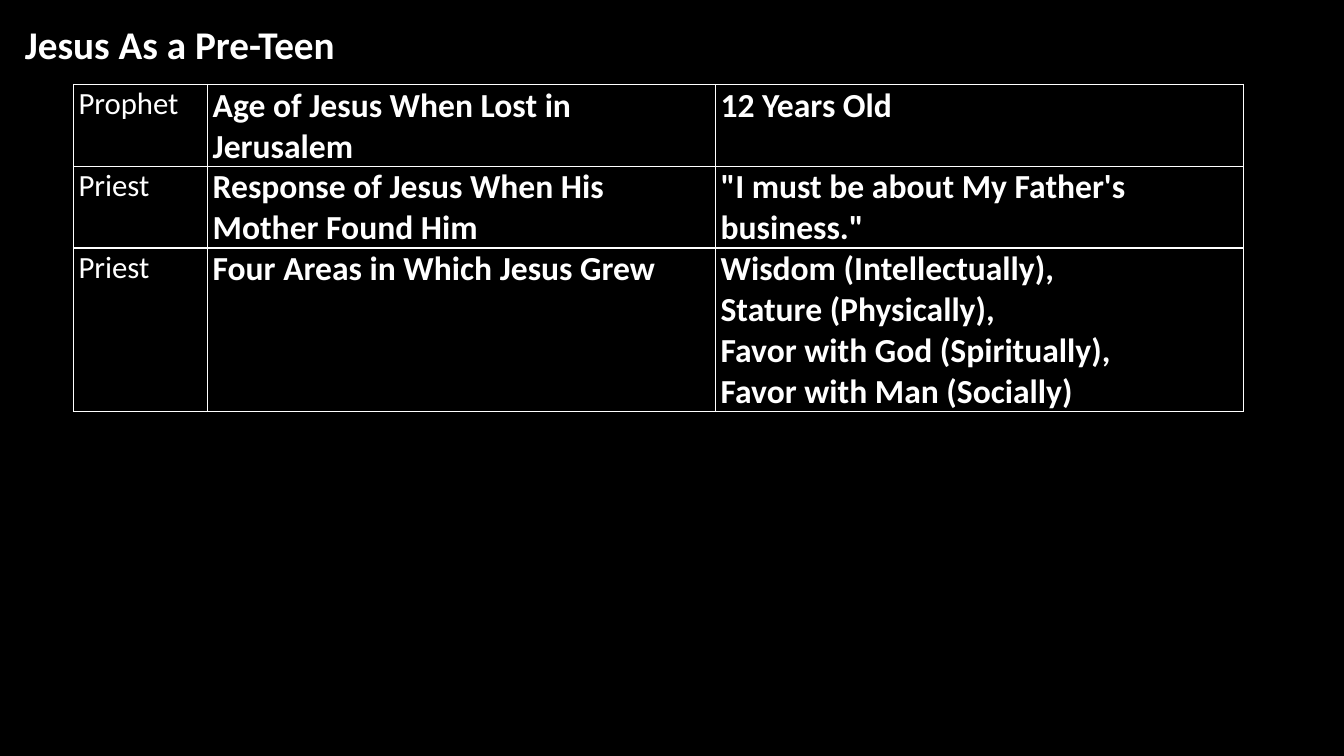
"""Build a slide with a table about Jesus as a pre-teen."""
from lxml import etree
from pptx import Presentation
from pptx.dml.color import RGBColor
from pptx.enum.text import MSO_AUTO_SIZE
from pptx.oxml.ns import qn
from pptx.util import Cm, Pt

TITLE = "Jesus As a Pre-Teen"
ROWS = [
    ("Prophet", "Age of Jesus When Lost in Jerusalem", "12 Years Old"),
    ("Priest", "Response of Jesus When His Mother Found Him",
     "\"I must be about My Father's business.\""),
    ("Priest", "Four Areas in Which Jesus Grew",
     "Wisdom (Intellectually),\nStature (Physically),\n"
     "Favor with God (Spiritually),\nFavor with Man (Socially)"),
]
ROW_LINES = [2, 2, 4]
COLUMN_WIDTHS = [3.38, 12.8, 13.31]
COLUMN_STYLES = [(22, False), (24, True), (24, True)]
LINE_HEIGHT = 1.03
TABLE_LEFT, TABLE_TOP = 1.85, 2.13

FONT = "Calibri"
BLACK = RGBColor(0, 0, 0)
WHITE = RGBColor(255, 255, 255)
FIT_SHAPE = MSO_AUTO_SIZE.SHAPE_TO_FIT_TEXT


def write(text_frame, text, size, bold):
    text_frame.text = text
    for paragraph in text_frame.paragraphs:
        for run in paragraph.runs:
            run.font.name = FONT
            run.font.size = Pt(size)
            run.font.bold = bold
            run.font.color.rgb = WHITE


def add_borders(cell):
    properties = cell._tc.get_or_add_tcPr()
    for position, side in enumerate(("lnL", "lnR", "lnT", "lnB")):
        line = etree.Element(qn(f"a:{side}"), w=str(Pt(1)))
        fill = etree.SubElement(line, qn("a:solidFill"))
        etree.SubElement(fill, qn("a:srgbClr"), val=str(WHITE))
        properties.insert(position, line)


def add_title(slide):
    box = slide.shapes.add_textbox(Cm(0.38), Cm(0.38), Cm(29.62), Cm(1.45))
    box.text_frame.word_wrap = True
    box.text_frame.auto_size = FIT_SHAPE
    write(box.text_frame, TITLE, 28, True)


def add_table(slide):
    table = slide.shapes.add_table(
        len(ROWS), len(COLUMN_WIDTHS), Cm(TABLE_LEFT), Cm(TABLE_TOP),
        Cm(sum(COLUMN_WIDTHS)), Cm(LINE_HEIGHT * sum(ROW_LINES))).table
    table.first_row = False
    table.horz_banding = False
    for column, width in zip(table.columns, COLUMN_WIDTHS):
        column.width = Cm(width)
    for row, texts, lines in zip(table.rows, ROWS, ROW_LINES):
        row.height = Cm(LINE_HEIGHT * lines)
        for cell, text, (size, bold) in zip(row.cells, texts, COLUMN_STYLES):
            cell.margin_left = Cm(0.13)
            cell.margin_top = cell.margin_right = Cm(0.02)
            cell.margin_bottom = Cm(0)
            cell.fill.background()
            add_borders(cell)
            write(cell.text_frame, text, size, bold)


def main():
    presentation = Presentation()
    presentation.slide_width, presentation.slide_height = Cm(33.87), Cm(19.05)
    slide = presentation.slides.add_slide(presentation.slide_layouts[6])
    slide.background.fill.solid()
    slide.background.fill.fore_color.rgb = BLACK
    add_title(slide)
    add_table(slide)
    presentation.save("out.pptx")


if __name__ == "__main__":
    main()
